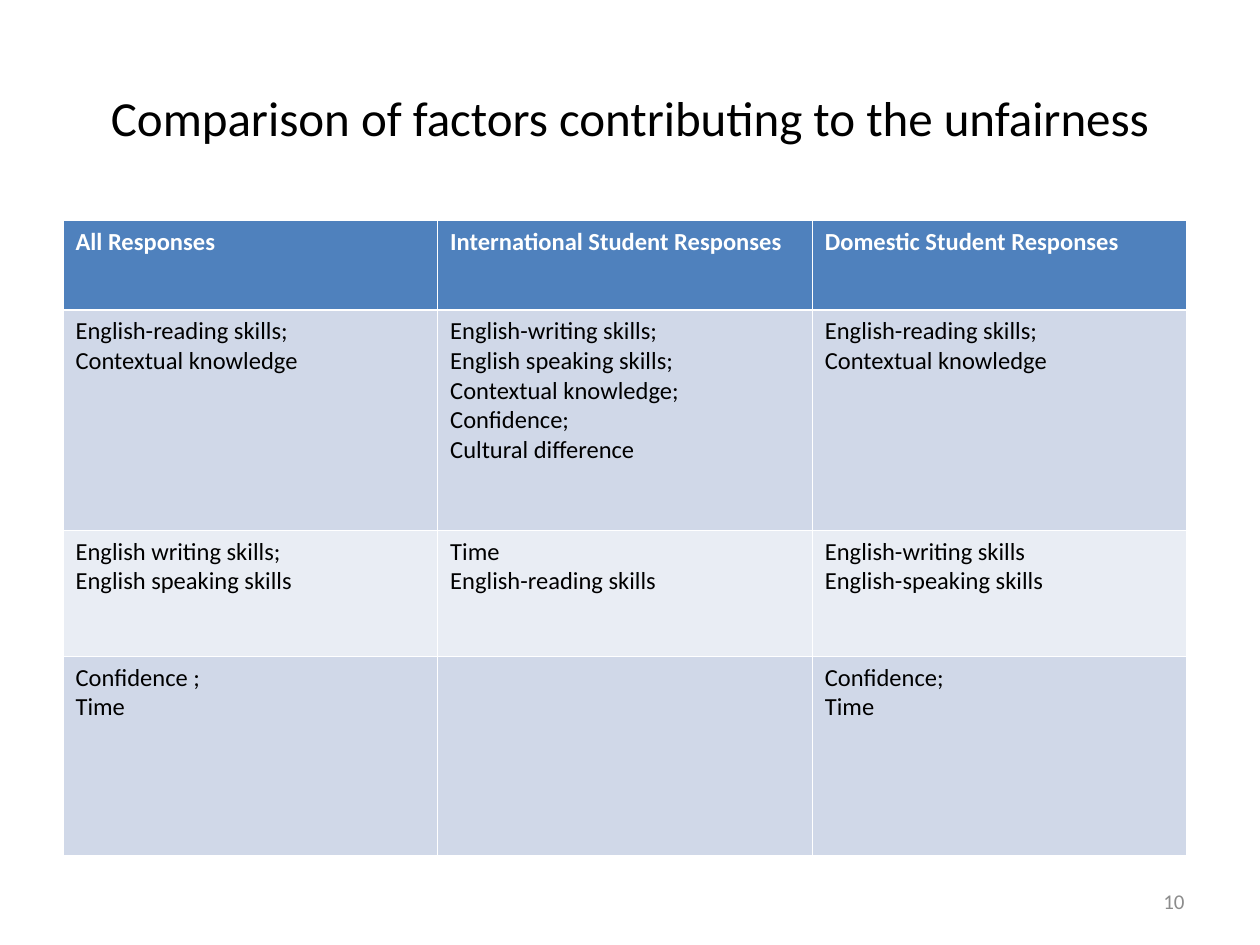
from dataclasses import dataclass

from pptx import Presentation
from pptx.dml.color import RGBColor
from pptx.enum.text import MSO_ANCHOR, PP_ALIGN
from pptx.util import Inches, Pt

LEFT, CENTER, RIGHT = PP_ALIGN.LEFT, PP_ALIGN.CENTER, PP_ALIGN.RIGHT
MIDDLE = MSO_ANCHOR.MIDDLE
FONT = "Calibri"
COLORS = {
    "header": "4F81BD",
    "band": "D0D8E8",
    "light": "E9EDF4",
    "text": "000000",
    "white": "FFFFFF",
    "number": "8C8C8C",
}


@dataclass
class Row:
    height: float
    fill: str
    cells: list[str]
    color: str = "text"
    bold: bool = False


ROWS = [
    Row(0.71, "header",
        ["All Responses", "International Student Responses", "Domestic Student Responses"],
        color="white", bold=True),
    Row(1.75, "band", [
        "English-reading skills;\nContextual knowledge",
        "English-writing skills;\nEnglish speaking skills;\n"
        "Contextual knowledge; Confidence;\nCultural difference",
        "English-reading skills;\nContextual knowledge",
    ]),
    Row(1, "light", [
        "English writing skills;\nEnglish speaking skills",
        "Time\nEnglish-reading skills",
        "English-writing skills\nEnglish-speaking skills",
    ]),
    Row(1.58, "band", ["Confidence ;\nTime", "", "Confidence;\nTime"]),
]


def rgb(name: str) -> RGBColor:
    return RGBColor.from_string(COLORS[name])


def set_text(tf, text: str, *, size: float, color: str = "text",
             bold: bool = False, align=LEFT) -> None:
    tf.word_wrap = True
    tf.text = text
    for p in tf.paragraphs:
        p.alignment = align
        p.font.size = Pt(size)
        for r in p.runs:
            r.font.name = FONT
            r.font.size = Pt(size)
            r.font.bold = bold
            r.font.color.rgb = rgb(color)


def add_text(s, text: str, left: float, top: float, width: float, height: float,
             **fmt) -> None:
    sp = s.shapes.add_textbox(Inches(left), Inches(top), Inches(width), Inches(height))
    set_text(sp.text_frame, text, **fmt)
    sp.text_frame.vertical_anchor = MIDDLE


def add_comparison(s, rows: list[Row], left: float, top: float, width: float) -> None:
    height = sum(row.height for row in rows)
    table = s.shapes.add_table(len(rows), len(rows[0].cells), Inches(left),
                               Inches(top), Inches(width), Inches(height)).table
    for row, table_row in zip(rows, table.rows):
        table_row.height = Inches(row.height)
        for text, cell in zip(row.cells, table_row.cells):
            cell.fill.solid()
            cell.fill.fore_color.rgb = rgb(row.fill)
            set_text(cell.text_frame, text, size=14, color=row.color, bold=row.bold)


def main() -> None:
    prs = Presentation()
    prs.slide_width, prs.slide_height = Inches(10), Inches(7.5)
    s = prs.slides.add_slide(prs.slide_layouts[6])
    add_text(s, "Comparison of factors contributing to the unfairness",
             0.5, 0.3, 9, 1.25, size=28, align=CENTER)
    add_comparison(s, ROWS, 0.5, 1.75, 8.92)
    add_text(s, "10", 7.17, 6.95, 2.33, 0.4, size=12, color="number", align=RIGHT)
    prs.save("out.pptx")


if __name__ == "__main__":
    main()
